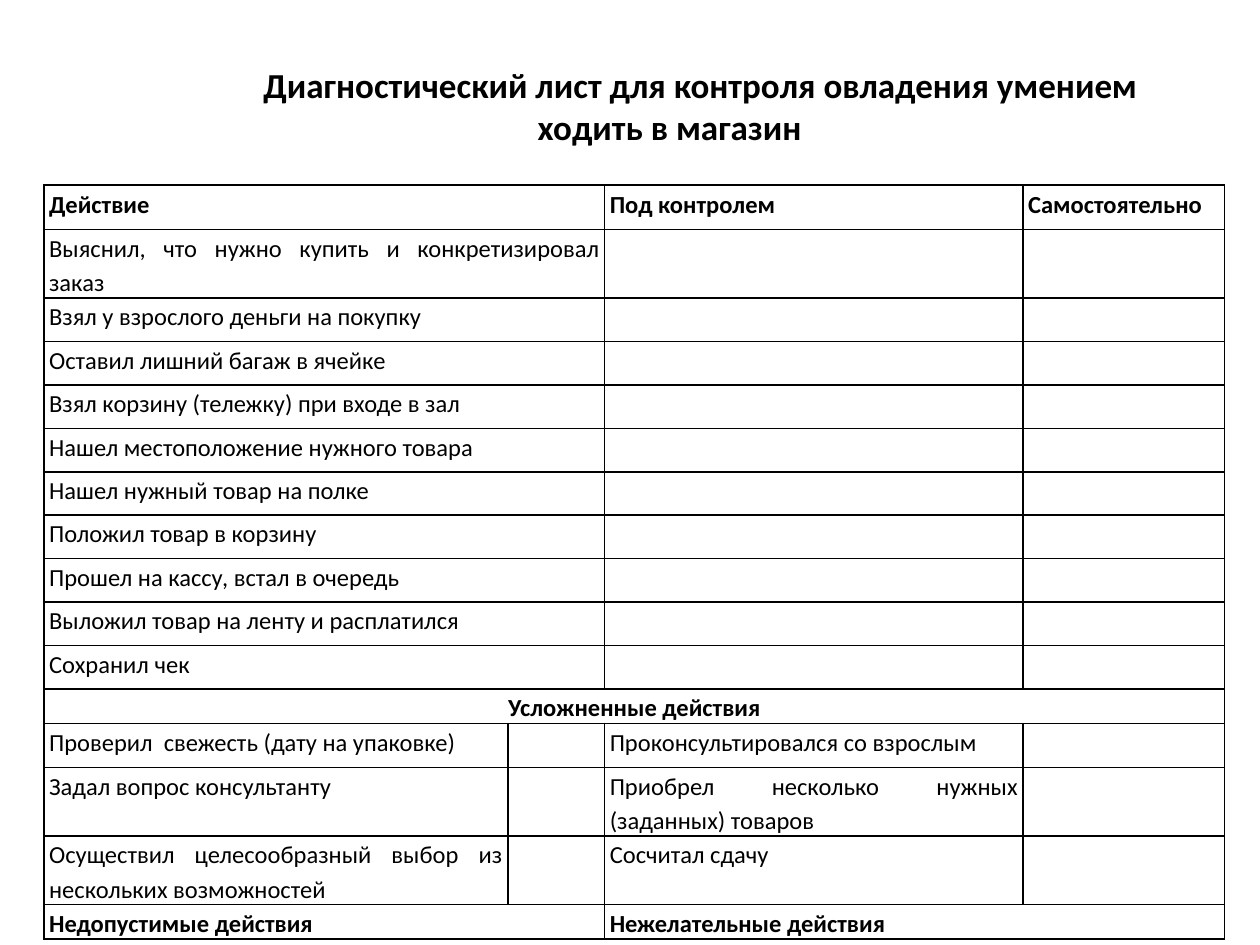
import pptx
import pptx.util
import pptx.dml.color
import pptx.enum.text
import pptx.oxml.ns
import lxml.etree
from dataclasses import dataclass

Inches = pptx.util.Inches
Pt = pptx.util.Pt
ALIGN = pptx.enum.text.PP_ALIGN
ANCHOR = pptx.enum.text.MSO_ANCHOR
qn = pptx.oxml.ns.qn


@dataclass(frozen=True)
class Theme:
    font: str = "Calibri"
    ink: str = "000000"
    title: int = 20
    body: int = 14
    border: int = 1


THEME = Theme()
TITLE = "Диагностический лист для контроля овладения умением ходить в магазин"
HEADER = ["Действие", None, "Под контролем", "Самостоятельно"]
ACTIONS = [
    "Выяснил, что нужно купить и конкретизировал заказ",
    "Взял у взрослого деньги на покупку",
    "Оставил лишний багаж в ячейке",
    "Взял корзину (тележку) при входе в зал",
    "Нашел местоположение нужного товара",
    "Нашел нужный товар на полке",
    "Положил товар в корзину",
    "Прошел на кассу, встал в очередь",
    "Выложил товар на ленту и расплатился",
    "Сохранил чек",
]
SECTION = ["Усложненные действия", None, None, None]
ADVANCED = [
    ("Проверил  свежесть (дату на упаковке)", "Проконсультировался со взрослым"),
    ("Задал вопрос консультанту", "Приобрел несколько нужных (заданных) товаров"),
    ("Осуществил целесообразный выбор из нескольких возможностей", "Сосчитал сдачу"),
]
FOOTER = ["Недопустимые действия", None, "Нежелательные действия", None]
ROWS = (
    [HEADER]
    + [[action, None, "", ""] for action in ACTIONS]
    + [SECTION]
    + [[left, "", right, ""] for left, right in ADVANCED]
    + [FOOTER]
)
BOLD_ROWS = (HEADER, SECTION, FOOTER)
COL_WIDTHS = [3.68, 0.77, 3.32, 1.6]
ROW_HEIGHTS = [0.35, 0.53] + [0.345] * 9 + [0.27, 0.35, 0.54, 0.54, 0.27]


def apply(target, values):
    for name, value in values.items():
        setattr(target, name, value)


def add_text(p, text, size, bold):
    r = p.add_run()
    r.text = text
    apply(r.font, {"name": THEME.font, "size": Pt(size), "bold": bold})
    r.font.color.rgb = pptx.dml.color.RGBColor.from_string(THEME.ink)


def add_title(s):
    sp = s.shapes.add_textbox(Inches(1.22), Inches(-0.04), Inches(8.19), Inches(1.55))
    tf = sp.text_frame
    apply(tf, {"word_wrap": True, "vertical_anchor": ANCHOR.MIDDLE,
               "margin_top": Inches(0.26)})
    p = tf.paragraphs[0]
    p.alignment = ALIGN.CENTER
    p._p.get_or_add_pPr().set("indent", str(Inches(0.49)))
    add_text(p, TITLE, THEME.title, True)


def set_borders(cell):
    tcPr = cell._tc.get_or_add_tcPr()
    for side in ("a:lnL", "a:lnR", "a:lnT", "a:lnB"):
        ln = lxml.etree.SubElement(tcPr, qn(side), w=str(Pt(THEME.border)))
        fill = lxml.etree.SubElement(ln, qn("a:solidFill"))
        lxml.etree.SubElement(fill, qn("a:srgbClr"), val=THEME.ink)


def fill_cell(cell, text, bold, align):
    apply(cell, {"margin_left": Inches(0.04), "margin_right": Inches(0.04),
                 "margin_top": 0, "margin_bottom": 0})
    set_borders(cell)
    cell.fill.background()
    p = cell.text_frame.paragraphs[0]
    if text:
        apply(p, {"alignment": align, "line_spacing": 1.15})
        add_text(p, text, THEME.body, bold)
    else:
        lxml.etree.SubElement(p._p, qn("a:endParaRPr"), sz=str(THEME.body * 100))


def merge_row(table, i, row):
    starts = [j for j, text in enumerate(row) if text is not None]
    for start, end in zip(starts, starts[1:] + [len(row)]):
        if end - start > 1:
            table.cell(i, start).merge(table.cell(i, end - 1))


def add_checklist(s):
    frame = s.shapes.add_table(len(ROWS), len(COL_WIDTHS), Inches(0.35), Inches(1.47),
                               Inches(sum(COL_WIDTHS)), Inches(sum(ROW_HEIGHTS)))
    table = frame.table
    apply(table, {"first_row": False, "horz_banding": False})
    for column, width in zip(table.columns, COL_WIDTHS):
        column.width = Inches(width)
    for i, row in enumerate(ROWS):
        table.rows[i].height = Inches(ROW_HEIGHTS[i])
        align = ALIGN.CENTER if row is SECTION else ALIGN.JUSTIFY
        for j, text in enumerate(row):
            fill_cell(table.cell(i, j), text, row in BOLD_ROWS, align)
        merge_row(table, i, row)


def main():
    prs = pptx.Presentation()
    apply(prs, {"slide_width": Inches(10), "slide_height": Inches(7.5)})
    s = prs.slides.add_slide(prs.slide_layouts[6])
    add_checklist(s)
    add_title(s)
    prs.save("out.pptx")


if __name__ == "__main__":
    main()
